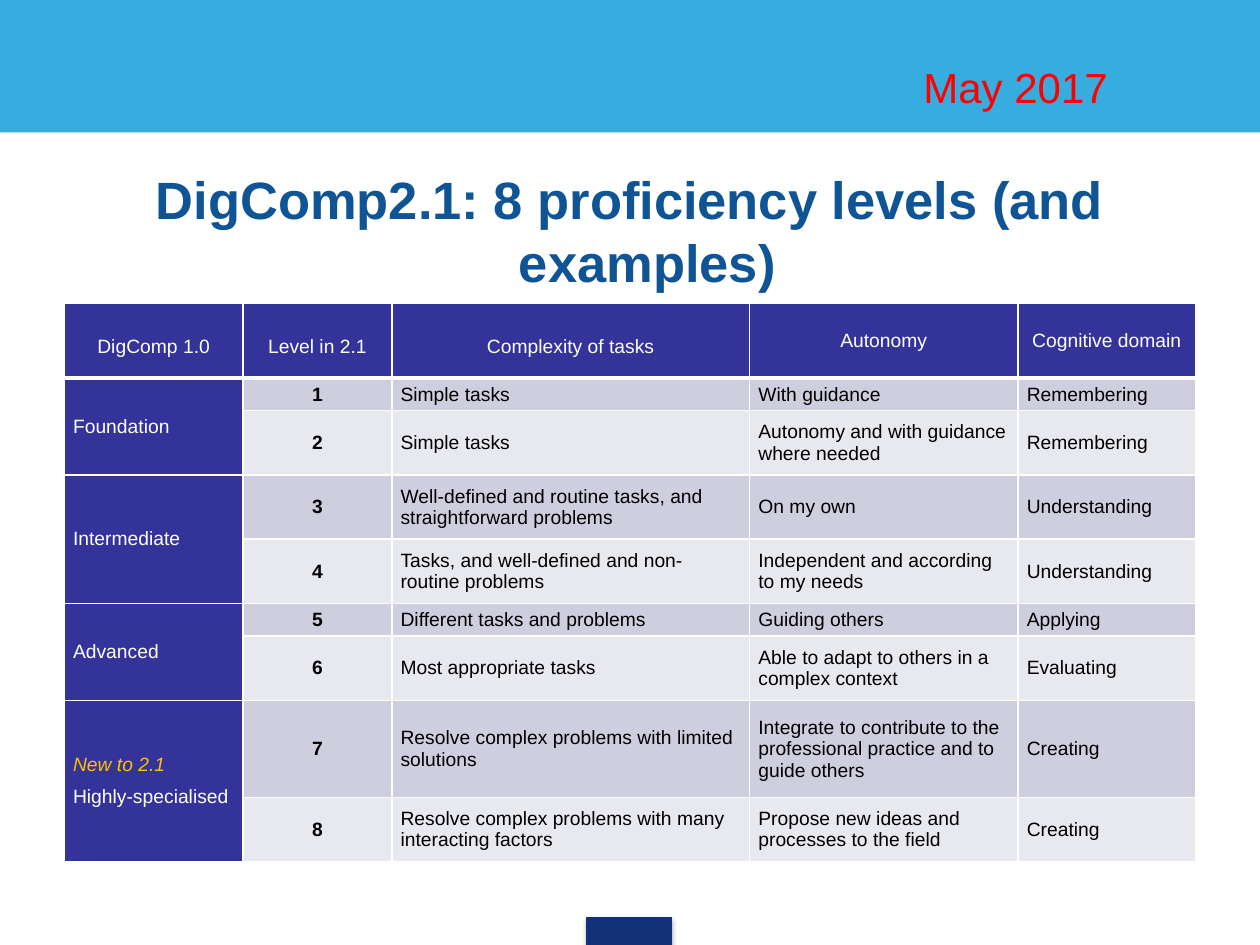
from dataclasses import dataclass
from typing import Any

from pptx import Presentation
from pptx.dml.color import RGBColor
from pptx.enum.shapes import MSO_SHAPE
from pptx.enum.text import MSO_ANCHOR as Anchor, PP_ALIGN as Align
from pptx.oxml import parse_xml
from pptx.oxml.ns import nsdecls
from pptx.util import Inches, Pt

WHITE = RGBColor(0xFF, 0xFF, 0xFF)
BLACK = RGBColor(0x00, 0x00, 0x00)
RED = RGBColor(0xFF, 0x00, 0x00)
GOLD = RGBColor(0xFF, 0xC0, 0x00)
SKY = RGBColor(0x37, 0xAC, 0xDE)
NAVY = RGBColor(0x13, 0x31, 0x76)
BLUE = RGBColor(0x0F, 0x54, 0x94)
INDIGO = RGBColor(0x33, 0x33, 0x99)
BANDS = RGBColor(0xCE, 0xCE, 0xDE), RGBColor(0xE8, 0xE8, 0xEF)

COLUMN_WIDTHS = 1.42, 1.18, 2.84, 2.13, 1.41
ROW_HEIGHTS = 0.59, 0.26, 0.51, 0.51, 0.51, 0.26, 0.51, 0.77, 0.51
HEADINGS = "DigComp 1.0", "Level in 2.1", "Complexity of tasks", "Autonomy", "Cognitive domain"
LOWERED_HEADINGS = HEADINGS[:3]
STAGES = ["Foundation"], ["Intermediate"], ["Advanced"], ["New to 2.1", "Highly-specialised"]
LEVELS = [
    ("Simple tasks", "With guidance", "Remembering"),
    ("Simple tasks", "Autonomy and with guidance where needed", "Remembering"),
    ("Well-defined and routine tasks, and straightforward problems", "On my own", "Understanding"),
    ("Tasks, and well-defined and non-routine problems", "Independent and according to my needs",
     "Understanding"),
    ("Different tasks and problems", "Guiding others", "Applying"),
    ("Most appropriate tasks", "Able to adapt to others in a complex context", "Evaluating"),
    ("Resolve complex problems with limited solutions",
     "Integrate to contribute to the professional practice and to guide others", "Creating"),
    ("Resolve complex problems with many interacting factors",
     "Propose new ideas and processes to the field", "Creating"),
]


@dataclass
class SlideBuilder:
    """Draws styled elements on the current slide."""

    slide: Any
    font_name: str = "Arial"
    cell_size: int = 11

    def add_line(self, paragraph, text, size, color, align=Align.LEFT, bold=False, italic=False):
        paragraph.alignment = align
        run = paragraph.add_run()
        run.text = text
        formats = {"name": self.font_name, "size": Pt(size), "bold": bold, "italic": italic}
        for name, value in formats.items():
            setattr(run.font, name, value)
        run.font.color.rgb = color

    def rectangle(self, left, top, width, height, color):
        shape = self.slide.shapes.add_shape(
            MSO_SHAPE.RECTANGLE, Inches(left), Inches(top), Inches(width), Inches(height))
        shape.shadow.inherit = False
        shape.fill.solid()
        shape.fill.fore_color.rgb = color
        shape.line.fill.background()
        return shape

    def shadowed_rectangle(self, left, top, width, height, color):
        shape = self.rectangle(left, top, width, height, color)
        shape.line.color.rgb = color
        shape.line.width = Pt(0.75)
        shape.element.spPr[-1].append(parse_xml(
            f'<a:outerShdw {nsdecls("a")} blurRad="{Pt(3.1)}" dist="{Pt(1.8)}" dir="5400000" '
            'rotWithShape="0"><a:srgbClr val="000000"><a:alpha val="35000"/></a:srgbClr>'
            '</a:outerShdw>'))

    def text(self, left, top, width, height, text, size, color, margin, indent=0,
             anchor=Anchor.TOP, **formats):
        box = self.slide.shapes.add_textbox(
            Inches(left), Inches(top), Inches(width), Inches(height))
        frame = box.text_frame
        frame.word_wrap = True
        frame.vertical_anchor = anchor
        paragraph = frame.paragraphs[0]
        properties = paragraph._p.get_or_add_pPr()
        for name, value in {"marL": margin, "indent": indent}.items():
            properties.set(name, str(Inches(value)))
        self.add_line(paragraph, text, size, color, **formats)

    def borders(self, cell, bottom):
        properties = cell._tc.get_or_add_tcPr()
        widths = {"lnL": 1, "lnR": 1, "lnT": 1, "lnB": bottom}
        for position, (side, width) in enumerate(widths.items()):
            properties.insert(position, parse_xml(
                f'<a:{side} {nsdecls("a")} w="{Pt(width)}"><a:solidFill>'
                f'<a:srgbClr val="{WHITE}"/></a:solidFill></a:{side}>'))

    def cell(self, cell, lines, fill, top=0, bottom_border=1, **formats):
        settings = {"margin_left": 0.07, "margin_right": 0.07, "margin_top": top, "margin_bottom": 0}
        for name, value in settings.items():
            setattr(cell, name, Inches(value))
        cell.vertical_anchor = Anchor.MIDDLE
        cell.fill.solid()
        cell.fill.fore_color.rgb = fill
        self.borders(cell, bottom_border)
        frame = cell.text_frame
        for index, (text, line_formats) in enumerate(lines):
            paragraph = frame.add_paragraph() if index else frame.paragraphs[0]
            if index:
                paragraph.space_before = Pt(6)
            self.add_line(paragraph, text, self.cell_size, **{**formats, **line_formats})

    def table(self, left, top):
        table = self.slide.shapes.add_table(
            len(ROW_HEIGHTS), len(COLUMN_WIDTHS), Inches(left), Inches(top),
            Inches(sum(COLUMN_WIDTHS)), Inches(sum(ROW_HEIGHTS))).table
        table.first_row = table.horz_banding = False
        for column, width in zip(table.columns, COLUMN_WIDTHS):
            column.width = Inches(width)
        for row, height in zip(table.rows, ROW_HEIGHTS):
            row.height = Inches(height)
        for column, heading in enumerate(HEADINGS):
            self.cell(table.cell(0, column), [(heading, {})], INDIGO, color=WHITE,
                      align=Align.CENTER, bottom_border=3,
                      top=0.1 if heading in LOWERED_HEADINGS else 0)
        for index, names in enumerate(STAGES):
            first, last = table.cell(2 * index + 1, 0), table.cell(2 * index + 2, 0)
            first.merge(last)
            notes = [(name, {"color": GOLD, "italic": True}) for name in names[:-1]]
            self.cell(first, notes + [(names[-1], {})], INDIGO, color=WHITE)
            self.cell(last, [], INDIGO)
        for level, texts in enumerate(LEVELS, 1):
            fill = BANDS[(level - 1) % 2]
            self.cell(table.cell(level, 1), [(str(level), {})], fill, color=BLACK,
                      align=Align.CENTER, bold=True)
            for column, text in enumerate(texts, 2):
                self.cell(table.cell(level, column), [(text, {})], fill, color=BLACK)


def main():
    presentation = Presentation()
    presentation.slide_width, presentation.slide_height = Inches(10), Inches(7.5)
    builder = SlideBuilder(presentation.slides.add_slide(presentation.slide_layouts[6]))
    builder.rectangle(0, 0, 10, 1.05, SKY)
    builder.shadowed_rectangle(4.66, 7.28, 0.67, 0.22, NAVY)
    builder.text(0.51, 1.47, 8.98, 0.71, "DigComp2.1: 8 proficiency levels (and examples) ",
                 30, BLUE, margin=0.39, indent=-0.39, anchor=Anchor.MIDDLE,
                 align=Align.CENTER, bold=True)
    builder.table(0.51, 2.41)
    builder.text(6.73, 0.44, 2.76, 0.91, "May 2017", 24, RED, margin=0.5)
    presentation.save("out.pptx")


if __name__ == "__main__":
    main()
